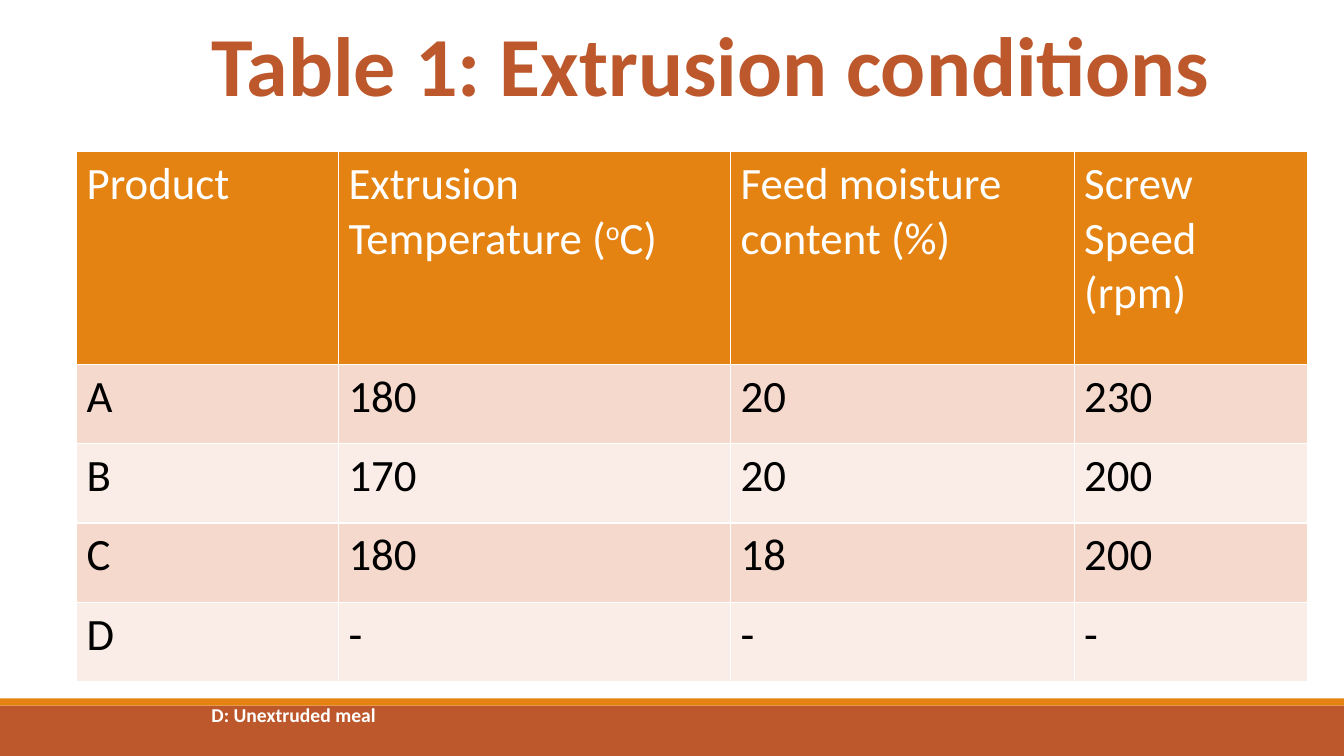
from pptx import Presentation
from pptx.dml.color import RGBColor
from pptx.enum.shapes import MSO_SHAPE
from pptx.enum.text import MSO_ANCHOR, MSO_AUTO_SIZE, PP_ALIGN
from pptx.util import Cm, Pt

FONT = "Calibri"
RUST, ORANGE, WHITE, BLACK = "BD582C", "E48312", "FFFFFF", "000000"
BANDS = ("F5D9CC", "FAEDE7")

COLUMN_WIDTHS = (6.6, 9.88, 8.66, 5.87)
HEADER_HEIGHT, ROW_HEIGHT = 5.36, 2.0

# Each header is a list of (text, baseline shift) runs
HEADERS = (
    [("Product", 0)],
    [("Extrusion Temperature (", 0), ("o", 30), ("C)", 0)],
    [("Feed moisture content (%)", 0)],
    [("Screw Speed (rpm)", 0)],
)
PRODUCTS = (
    ("A", "180", "20", "230"),
    ("B", "170", "20", "200"),
    ("C", "180", "18", "200"),
    ("D", "-", "-", "-"),
)


def paint(fill, color):
    fill.solid()
    fill.fore_color.rgb = RGBColor.from_string(color)


def add_run(paragraph, text, size, color, bold=False, baseline=0):
    run = paragraph.add_run()
    run.text = text
    run.font.name = FONT
    run.font.size = Pt(size)
    run.font.bold = bold
    run.font.color.rgb = RGBColor.from_string(color)
    if baseline:
        run.font._element.set("baseline", str(baseline * 1000))


def add_bar(slide, top, height, color):
    bar = slide.shapes.add_shape(
        MSO_SHAPE.RECTANGLE, 0, Cm(top), Cm(33.87), Cm(height))
    bar.shadow.inherit = False
    bar.line.fill.background()
    paint(bar.fill, color)


def set_title(slide, text):
    title = slide.shapes.title
    title.left, title.top = Cm(5.08), Cm(0)
    title.width, title.height = Cm(27.51), Cm(3.18)
    frame = title.text_frame
    frame.auto_size = MSO_AUTO_SIZE.NONE
    frame.vertical_anchor = MSO_ANCHOR.MIDDLE
    heading = frame.paragraphs[0]
    heading.alignment = PP_ALIGN.LEFT
    add_run(heading, text, 60, RUST, bold=True)


def fill_cell(cell, runs, text_color, fill_color):
    paint(cell.fill, fill_color)
    for text, baseline in runs:
        add_run(cell.text_frame.paragraphs[0], text, 32, text_color,
                baseline=baseline)


def add_conditions(slide):
    height = HEADER_HEIGHT + ROW_HEIGHT * len(PRODUCTS)
    conditions = slide.shapes.add_table(
        len(PRODUCTS) + 1, len(HEADERS),
        Cm(1.93), Cm(3.82), Cm(sum(COLUMN_WIDTHS)), Cm(height)).table
    for column, width in zip(conditions.columns, COLUMN_WIDTHS):
        column.width = Cm(width)
    for index, row in enumerate(conditions.rows):
        row.height = Cm(ROW_HEIGHT if index else HEADER_HEIGHT)

    for column, runs in enumerate(HEADERS):
        fill_cell(conditions.cell(0, column), runs, WHITE, ORANGE)
    for index, product in enumerate(PRODUCTS):
        for column, value in enumerate(product):
            fill_cell(conditions.cell(index + 1, column), [(value, 0)],
                      BLACK, BANDS[index % 2])


def add_footnote(slide, text):
    footnote = slide.shapes.add_textbox(
        Cm(5.08), Cm(17.58), Cm(13.97), Cm(0.86))
    frame = footnote.text_frame
    frame.word_wrap = True
    frame.auto_size = MSO_AUTO_SIZE.SHAPE_TO_FIT_TEXT
    add_run(frame.paragraphs[0], text, 14, WHITE, bold=True)


def main():
    deck = Presentation()
    deck.slide_width, deck.slide_height = Cm(33.87), Cm(19.05)
    slide = deck.slides.add_slide(deck.slide_layouts[5])

    # Footer bars
    add_bar(slide, 17.78, 1.27, RUST)
    add_bar(slide, 17.6, 0.18, ORANGE)

    # Heading, table and its footnote
    set_title(slide, "Table 1: Extrusion conditions")
    add_conditions(slide)
    add_footnote(slide, "D: Unextruded meal")

    deck.save("out.pptx")


if __name__ == "__main__":
    main()
